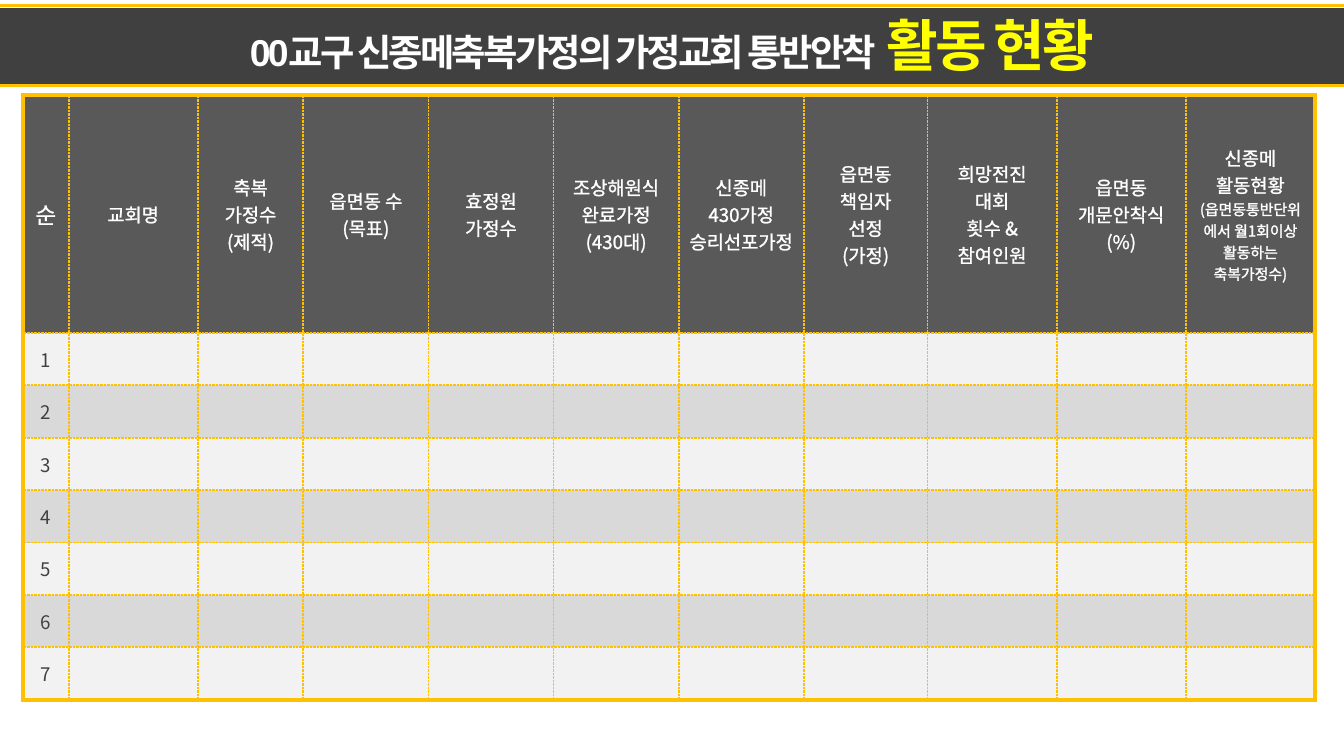
"""Build the parish activity status slide with its title band and table."""
from dataclasses import dataclass

from lxml.etree import SubElement
from pptx import Presentation
from pptx.dml.color import RGBColor
from pptx.enum.shapes import MSO_CONNECTOR, MSO_SHAPE
from pptx.enum.text import MSO_ANCHOR, MSO_AUTO_SIZE, PP_ALIGN
from pptx.oxml.ns import qn
from pptx.slide import Slide
from pptx.table import _Cell
from pptx.text.text import _Paragraph
from pptx.util import Inches, Pt

HUES = {
    "band": "404040", "gold": "FFC000", "white": "FFFFFF", "yellow": "FFFF00",
    "head": "595959", "light": "F2F2F2", "gray": "D9D9D9", "ink": "404040",
}
LATIN = "Arial"
HANGUL = "Noto Sans CJK KR"
ROWS = 7
HEAD_H, ROW_H = 3.54, 0.78


@dataclass(frozen=True)
class Span:
    text: str
    size: float
    hue: str = "white"
    font: str = HANGUL
    bold: bool = False
    gap: float = 0
    edge: bool = True


@dataclass(frozen=True)
class Column:
    width: float
    lines: tuple[str, ...]
    size: float = 20
    note: str = ""


TITLE = [
    Span("00교구 신종메축복가정의 가정교회 통반안착", 40, "white", LATIN, True, -3, False),
    Span(" ", 48, "white", LATIN, True, -3, False),
    Span("활동 현황", 60, "yellow", LATIN, True, -3, False),
]
COLUMNS = [
    Column(0.68, ("순",), 24),
    Column(1.92, ("교회명",)),
    Column(1.57, ("축복", "가정수", "(제적)")),
    Column(1.86, ("읍면동 수", "(목표)")),
    Column(1.86, ("효정원", "가정수")),
    Column(1.86, ("조상해원식", "완료가정", "(430대)")),
    Column(1.86, ("신종메", "430가정", "승리선포가정")),
    Column(1.84, ("읍면동", "책임자", "선정", "(가정)")),
    Column(1.92, ("희망전진", "대회", "횟수 &", "참여인원")),
    Column(1.92, ("읍면동", "개문안착식(%)")),
    Column(1.92, ("신종메", "활동현황"), 20, "(읍면동통반단위에서 월1회이상 활동하는 축복가정수)"),
]


def tint(name: str) -> RGBColor:
    return RGBColor.from_string(HUES[name])


def add_span(para: _Paragraph, span: Span) -> None:
    para.alignment = PP_ALIGN.CENTER
    run = para.add_run()
    run.text = span.text
    font = run.font
    props = font._element
    if span.edge:
        line = SubElement(props, qn("a:ln"), w=str(Pt(0.75)))
        fill = SubElement(line, qn("a:solidFill"))
        SubElement(fill, qn("a:srgbClr"), val=HUES[span.hue])
    font.size = Pt(span.size)
    font.bold = span.bold
    font.color.rgb = tint(span.hue)
    font.name = span.font
    SubElement(props, qn("a:ea"), typeface=HANGUL)
    if span.gap:
        props.set("spc", str(int(span.gap * 100)))


def add_rule(slide: Slide, top: float) -> None:
    rule = slide.shapes.add_connector(
        MSO_CONNECTOR.STRAIGHT, Inches(-0.22), Inches(top), Inches(20.2), Inches(top))
    rule.line.color.rgb = tint("gold")
    rule.line.width = Pt(3)
    SubElement(rule.element.spPr, qn("a:effectLst"))


def add_band(slide: Slide) -> None:
    band = slide.shapes.add_shape(
        MSO_SHAPE.RECTANGLE, Inches(-0.13), Inches(0.12), Inches(20.2), Inches(1.15))
    band.shadow.inherit = False
    band.fill.solid()
    band.fill.fore_color.rgb = tint("band")
    band.line.fill.background()
    for top in (1.27, 0.08):
        add_rule(slide, top)


def set_title(slide: Slide) -> None:
    title = slide.shapes.title
    title.left, title.top = Inches(0), Inches(0.12)
    title.width, title.height = Inches(19.98), Inches(1.06)
    frame = title.text_frame
    frame.auto_size = MSO_AUTO_SIZE.NONE
    frame.word_wrap = True
    frame.vertical_anchor = MSO_ANCHOR.MIDDLE
    frame.margin_left = frame.margin_right = Inches(0)
    frame.margin_top = frame.margin_bottom = Inches(0.05)
    for span in TITLE:
        add_span(frame.paragraphs[0], span)
    slide.shapes.element.append(title.element)


def set_edges(cell: _Cell, outer: dict[str, bool]) -> None:
    props = cell._tc.get_or_add_tcPr()
    for spot, (side, thick) in enumerate(outer.items()):
        line = props.makeelement(qn(f"a:ln{side}"), {"w": str(Pt(4.5 if thick else 2.25))})
        fill = SubElement(line, qn("a:solidFill"))
        SubElement(fill, qn("a:srgbClr"), val=HUES["gold"])
        SubElement(line, qn("a:prstDash"), val="solid" if thick else "sysDot")
        props.insert(spot, line)


def fill_cell(cell: _Cell, hue: str, spans: list[Span]) -> None:
    cell.fill.solid()
    cell.fill.fore_color.rgb = tint(hue)
    cell.vertical_anchor = MSO_ANCHOR.MIDDLE
    cell.margin_left = cell.margin_right = Inches(0.15)
    cell.margin_top = cell.margin_bottom = Inches(0.07)
    frame = cell.text_frame
    for spot, span in enumerate(spans):
        add_span(frame.add_paragraph() if spot else frame.paragraphs[0], span)


def get_spans(row: int, col: int) -> list[Span]:
    if row:
        return [] if col else [Span(str(row), 20, "ink")]
    head = COLUMNS[col]
    spans = [Span(line, head.size) for line in head.lines]
    return spans + ([Span(head.note, 16)] if head.note else [])


def add_grid(slide: Slide) -> None:
    last = len(COLUMNS) - 1
    grid = slide.shapes.add_table(
        ROWS + 1, last + 1, Inches(0.34), Inches(1.41), Inches(19.22), Inches(9)).table
    grid.horz_banding = False
    for col, head in enumerate(COLUMNS):
        grid.columns[col].width = Inches(head.width)
    for row in range(ROWS + 1):
        grid.rows[row].height = Inches(ROW_H if row else HEAD_H)
        hue = ("light" if row % 2 else "gray") if row else "head"
        for col in range(last + 1):
            cell = grid.cell(row, col)
            fill_cell(cell, hue, get_spans(row, col))
            set_edges(cell, {"L": col == 0, "R": col == last, "T": row == 0, "B": row == ROWS})


def main() -> None:
    deck = Presentation()
    deck.slide_width, deck.slide_height = Inches(19.98), Inches(11.23)
    slide = deck.slides.add_slide(deck.slide_layouts[5])
    add_band(slide)
    set_title(slide)
    add_grid(slide)
    deck.save("out.pptx")


if __name__ == "__main__":
    main()
